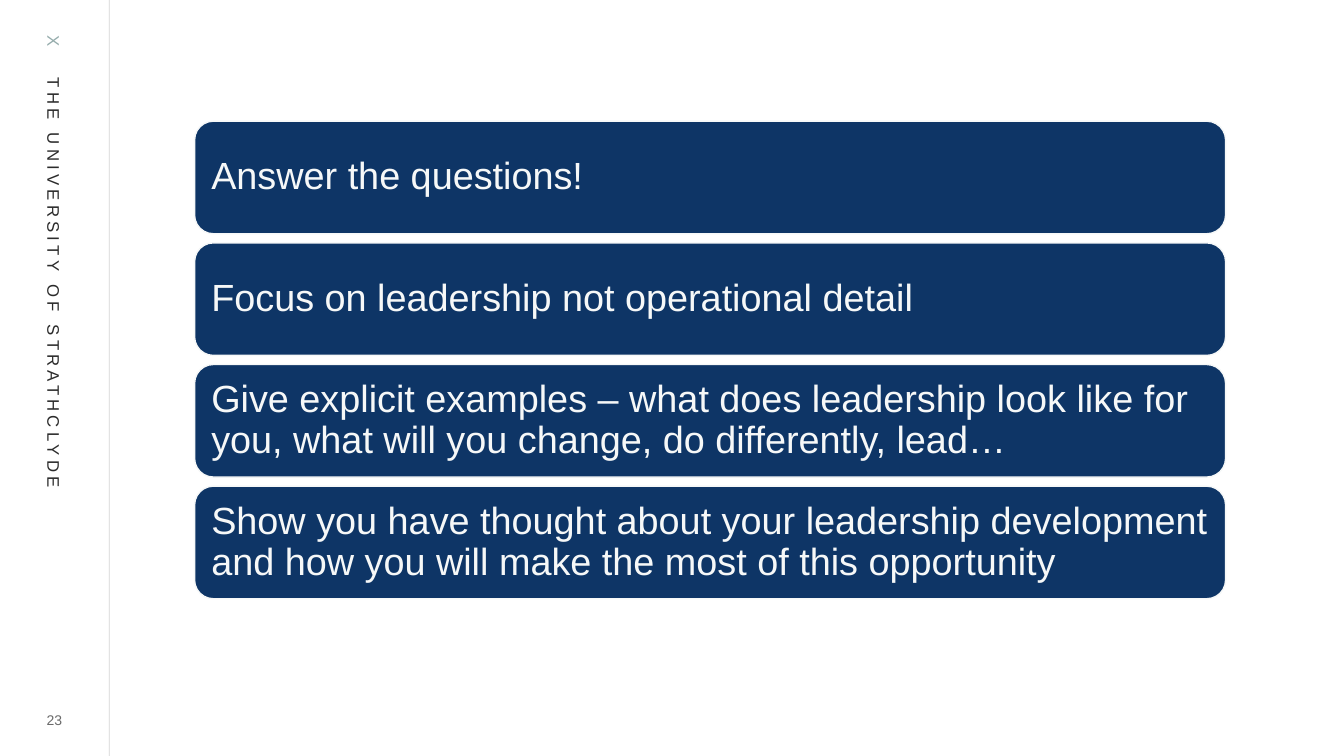
from dataclasses import dataclass
from typing import Any

import pptx
import pptx.dml.color
import pptx.enum.shapes
import pptx.enum.text
import pptx.oxml
import pptx.oxml.ns
import pptx.util

Pt = pptx.util.Pt
ANCHOR = pptx.enum.text.MSO_ANCHOR
ALIGN = pptx.enum.text.PP_ALIGN
COLOURS = {"navy": "0E3566", "pale": "F6F8F8", "ink": "2B2B2B", "sage": "95ACAC"}

PAGE_WIDTH, PAGE_HEIGHT = 960, 540
RULE_X = 78
CARD_LEFT, CARD_TOP, CARD_WIDTH, CARD_HEIGHT = 139, 86.6, 736.4, 80.4
CARD_PITCH = 86.9
BRAND_TAB = 30

CARD_FRAME = {
    "word_wrap": True,
    "vertical_anchor": ANCHOR.MIDDLE,
    "margin_left": Pt(8),
    "margin_right": Pt(7),
    "margin_top": Pt(8),
    "margin_bottom": Pt(8),
}
NUMBER_FRAME = {
    "word_wrap": True,
    "vertical_anchor": ANCHOR.MIDDLE,
    "margin_left": 0,
    "margin_right": 0,
    "margin_top": 0,
    "margin_bottom": 0,
}
CARDS = [
    "Answer the questions!",
    "Focus on leadership not operational detail",
    "Give explicit examples – what does leadership look like for you, "
    "what will you change, do differently, lead…",
    "Show you have thought about your leadership development "
    "and how you will make the most of this opportunity",
]


@dataclass
class Span:
    text: str
    size: float
    colour: str
    spacing: float = 0


BRAND = [Span("X", 12, "sage", 3), Span("\tTHE UNIVERSITY OF STRATHCLYDE", 12, "ink", 3)]


def rgb(name: str) -> pptx.dml.color.RGBColor:
    return pptx.dml.color.RGBColor.from_string(COLOURS[name])


def apply_format(target: Any, values: dict[str, Any]) -> None:
    for name, value in values.items():
        setattr(target, name, value)


def set_opacity(element: Any, percent: int) -> None:
    """Make every plain colour inside the element partly transparent."""
    for colour in element.xpath(".//a:srgbClr"):
        alpha = pptx.oxml.parse_xml(f'<a:alpha {pptx.oxml.ns.nsdecls("a")} val="{percent * 1000}"/>')
        colour.append(alpha)


def add_span(para: Any, span: Span) -> None:
    run = para.add_run()
    run.text = span.text
    apply_format(run.font, {"name": "Arial", "size": Pt(span.size)})
    run.font.color.rgb = rgb(span.colour)
    if span.spacing:
        run.font._element.set("spc", str(round(span.spacing * 100)))


def add_rule(page: Any) -> None:
    rule = page.shapes.add_connector(
        pptx.enum.shapes.MSO_CONNECTOR.STRAIGHT, Pt(RULE_X), 0, Pt(RULE_X), Pt(PAGE_HEIGHT)
    )
    rule.line.color.rgb = rgb("ink")
    rule.line.width = Pt(0.5)
    properties = rule._element.spPr
    set_opacity(properties, 20)
    properties.append(pptx.oxml.parse_xml(f'<a:effectLst {pptx.oxml.ns.nsdecls("a")}/>'))


def add_brand(page: Any) -> None:
    box = page.shapes.add_textbox(Pt(-165.6), Pt(211.7), Pt(408.2), Pt(21.6))
    box.rotation = 90
    box.text_frame.word_wrap = True
    para = box.text_frame.paragraphs[0]
    tabs = pptx.oxml.parse_xml(
        f'<a:tabLst {pptx.oxml.ns.nsdecls("a")}><a:tab pos="{Pt(BRAND_TAB)}" algn="l"/></a:tabLst>'
    )
    para._element.get_or_add_pPr().append(tabs)
    for span in BRAND:
        add_span(para, span)


def add_page_number(page: Any) -> None:
    box = page.shapes.add_textbox(Pt(18.7), Pt(505.4), Pt(40.3), Pt(18))
    apply_format(box.text_frame, NUMBER_FRAME)
    para = box.text_frame.paragraphs[0]
    para.alignment = ALIGN.CENTER
    add_span(para, Span("23", 10, "ink"))
    set_opacity(para._element, 70)


def add_card(page: Any, top: float, text: str) -> None:
    card = page.shapes.add_shape(
        pptx.enum.shapes.MSO_SHAPE.ROUNDED_RECTANGLE,
        Pt(CARD_LEFT), Pt(top), Pt(CARD_WIDTH), Pt(CARD_HEIGHT),
    )
    card.shadow.inherit = False
    card.fill.solid()
    card.fill.fore_color.rgb = rgb("navy")
    card.line.color.rgb = rgb("pale")
    card.line.width = Pt(1)
    apply_format(card.text_frame, CARD_FRAME)
    para = card.text_frame.paragraphs[0]
    apply_format(para, {"alignment": ALIGN.LEFT, "line_spacing": 0.9})
    add_span(para, Span(text, 27, "pale"))


def main() -> None:
    deck = pptx.Presentation()
    apply_format(deck, {"slide_width": Pt(PAGE_WIDTH), "slide_height": Pt(PAGE_HEIGHT)})
    page = deck.slides.add_slide(deck.slide_layouts[6])
    add_rule(page)
    add_brand(page)
    add_page_number(page)
    for index, text in enumerate(CARDS):
        add_card(page, CARD_TOP + index * CARD_PITCH, text)
    deck.save("out.pptx")


if __name__ == "__main__":
    main()
